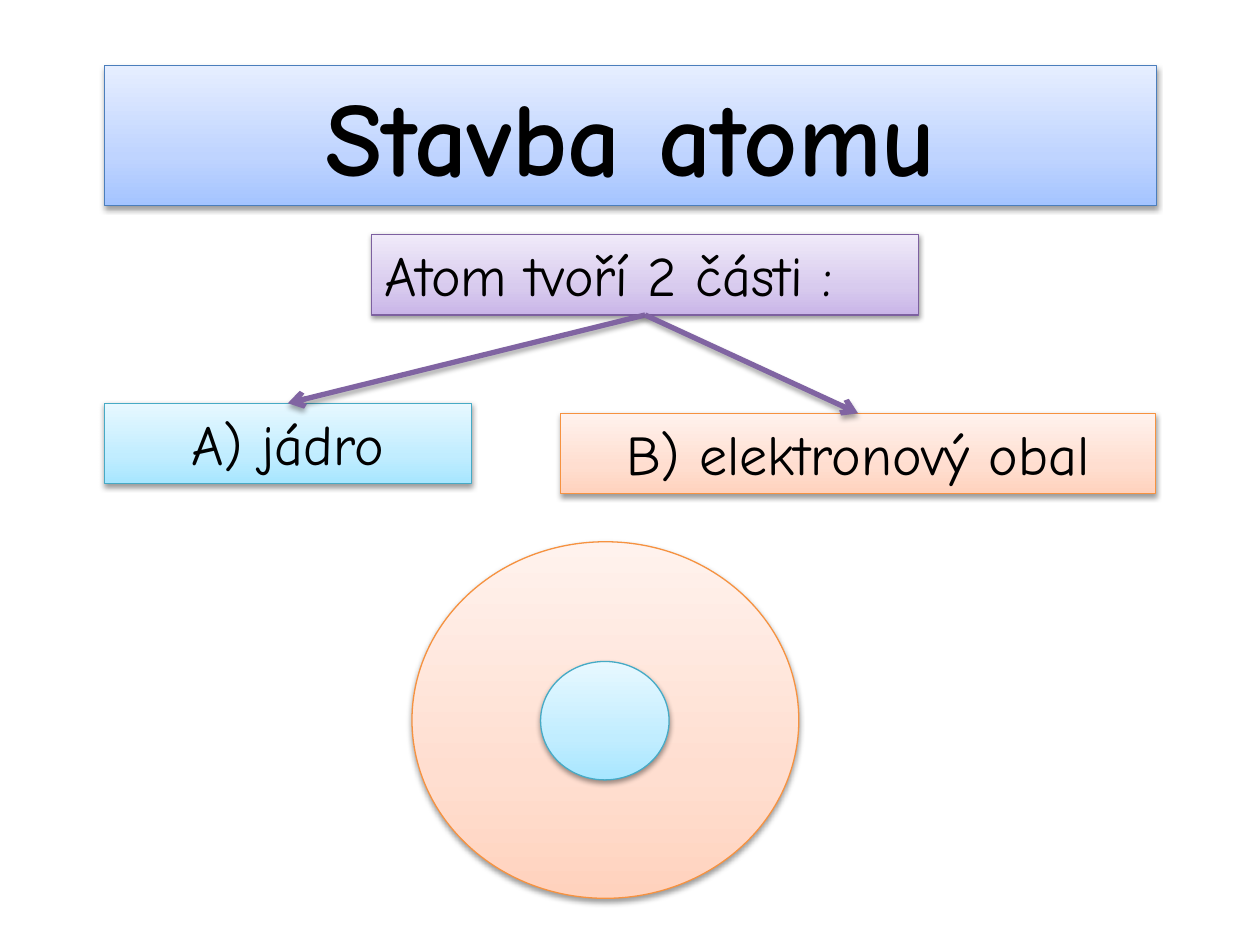
"""Build a slide showing the two parts of an atom."""
from copy import deepcopy
from dataclasses import dataclass

from lxml.etree import SubElement
from pptx import Presentation
from pptx.dml.color import RGBColor
from pptx.enum.shapes import MSO_CONNECTOR, MSO_SHAPE
from pptx.enum.text import MSO_ANCHOR, MSO_AUTO_SIZE, PP_ALIGN
from pptx.oxml.ns import qn
from pptx.util import Inches, Pt


@dataclass(frozen=True)
class Theme:
    font: str = "Comic Neue"
    title_size: int = 60
    body_size: int = 32
    text: str = "000000"
    arrow: str = "8064A2"
    arrow_width: float = 3
    outline_width: float = 0.75
    stops: tuple = (0, 0.35, 1)
    blue: tuple = ("4B7EBC", "A4C4FF", "BFD4FF", "E6EEFF")
    purple: tuple = ("7D60A0", "C9B5E8", "D8CBEE", "F0EAF9")
    aqua: tuple = ("46AAC5", "A7E6FF", "C1EDFF", "E7F8FF")
    orange: tuple = ("F69240", "FFD2BD", "FFDED0", "FFF2ED")


def apply(target, values):
    for name, value in values.items():
        setattr(target, name, value)


class AtomSlide:
    def __init__(self, slide, theme):
        self.slide = slide
        self.theme = theme

    def outline(self, line, color, width):
        line.color.rgb = RGBColor.from_string(color)
        line.width = Pt(width)

    def cast_shadow(self, properties, opacity, distance):
        effects = properties.find(qn("a:effectLst"))
        if effects is None:
            effects = SubElement(properties, qn("a:effectLst"))
        shadow = SubElement(effects, qn("a:outerShdw"), blurRad=str(Pt(3.1)),
                            dist=str(Pt(distance)), dir="5400000", rotWithShape="0")
        black = SubElement(shadow, qn("a:srgbClr"), val="000000")
        SubElement(black, qn("a:alpha"), val=str(opacity * 1000))

    def figure(self, kind, bounds, palette):
        shape = self.slide.shapes.add_shape(kind, *map(Inches, bounds))
        border, *shades = palette
        shape.fill.gradient()
        shape.fill.gradient_angle = 90
        stop_list = shape.fill.gradient_stops
        properties = shape._element.spPr
        first = properties.find(".//" + qn("a:gs"))
        first.addnext(deepcopy(first))
        stop_list = shape.fill.gradient_stops
        for stop, position, shade in zip(stop_list, self.theme.stops, shades):
            stop.position = position
            stop.color.rgb = RGBColor.from_string(shade)
        self.outline(shape.line, border, self.theme.outline_width)
        shape.shadow.inherit = False
        self.cast_shadow(properties, 38, 1.6)
        return shape

    def circle(self, bounds, palette):
        return self.figure(MSO_SHAPE.OVAL, bounds, palette)

    def label(self, text, bounds, palette, size=None, bold=False,
              align=PP_ALIGN.CENTER, wrap=True):
        shape = self.figure(MSO_SHAPE.RECTANGLE, bounds, palette)
        frame = shape.text_frame
        apply(frame, {"word_wrap": wrap, "vertical_anchor": MSO_ANCHOR.TOP,
                      "auto_size": MSO_AUTO_SIZE.SHAPE_TO_FIT_TEXT})
        paragraph = frame.paragraphs[0]
        paragraph.alignment = align
        run = paragraph.add_run()
        run.text = text
        apply(run.font, {"name": self.theme.font, "bold": bold,
                         "size": Pt(size or self.theme.body_size)})
        run.font.color.rgb = RGBColor.from_string(self.theme.text)
        return shape

    def arrow(self, source, target):
        arrow = self.slide.shapes.add_connector(MSO_CONNECTOR.STRAIGHT, 0, 0, 0, 0)
        arrow.begin_connect(source, 2)
        arrow.end_connect(target, 0)
        self.outline(arrow.line, self.theme.arrow, self.theme.arrow_width)
        properties = arrow._element.spPr
        SubElement(properties.find(qn("a:ln")), qn("a:tailEnd"), type="arrow")
        self.cast_shadow(properties, 35, 1.8)


def main():
    deck = Presentation()
    deck.slide_width, deck.slide_height = Inches(10), Inches(7.5)
    theme = Theme()
    atom = AtomSlide(deck.slides.add_slide(deck.slide_layouts[6]), theme)

    atom.circle((3.27, 4.3, 3.07, 2.83), theme.orange)
    atom.label("Stavba atomu", (0.83, 0.52, 8.35, 1.11), theme.blue,
               size=theme.title_size, bold=True)
    parts = atom.label("Atom tvoří 2 části :", (2.95, 1.86, 4.34, 0.64),
                       theme.purple, align=PP_ALIGN.LEFT, wrap=False)
    nucleus = atom.label("A) jádro", (0.83, 3.2, 2.91, 0.64), theme.aqua)
    shell = atom.label("B) elektronový obal", (4.45, 3.28, 4.72, 0.64), theme.orange)
    for part in (nucleus, shell):
        atom.arrow(parts, part)
    atom.circle((4.29, 5.25, 1.02, 0.94), theme.aqua)

    deck.save("out.pptx")


if __name__ == "__main__":
    main()
